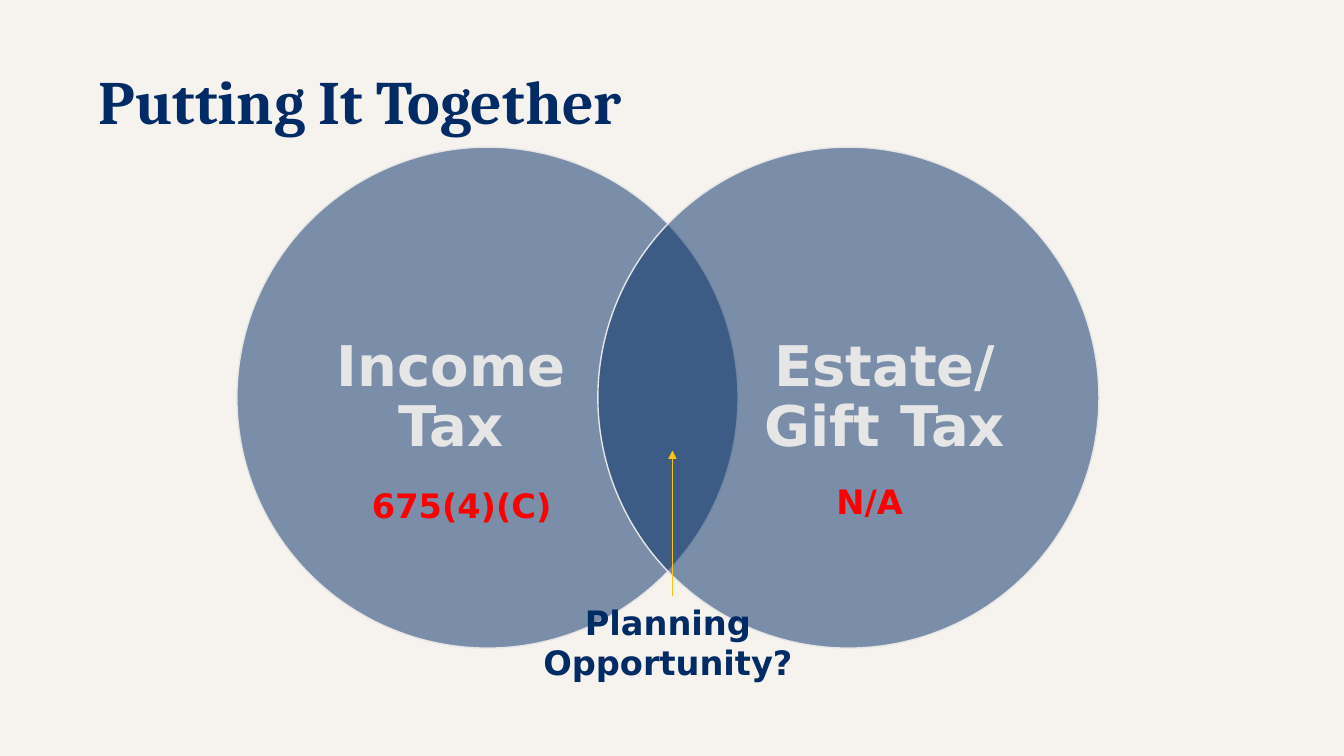
from lxml import etree
from pptx import Presentation
from pptx.dml.color import RGBColor
from pptx.enum.shapes import MSO_CONNECTOR, MSO_SHAPE
from pptx.enum.text import MSO_ANCHOR, PP_ALIGN
from pptx.oxml.ns import qn
from pptx.util import Inches, Pt

COLORS = {"bg": "F6F3EF", "navy": "002B64", "light": "E7E6E6",
          "red": "FF0000", "gold": "FFC20E"}
TITLE = "Putting It Together"
# circle left, label left, label
CIRCLES = [(2.35, 3.04, "Income Tax"), (5.93, 7.34, "Estate/\vGift Tax")]
CIRCLE_TOP, DIAMETER = 1.46, 4.97
LABEL_TOP, LABEL_W, LABEL_H = 2.05, 2.87, 3.8
# left, top, width, height, text, color, alignment
NOTES = [
    (3.59, 4.76, 2.49, 0.5, "675(4)(C)", "red", PP_ALIGN.LEFT),
    (7.75, 4.72, 1.75, 0.51, "N/A", "red", PP_ALIGN.CENTER),
    (4.46, 5.92, 4.33, 0.91, "Planning Opportunity?", "navy", PP_ALIGN.CENTER),
]
ARROW_X, ARROW_START, ARROW_END = 6.67, 5.91, 4.47


def rgb(name):
    return RGBColor.from_string(COLORS[name])


def write(tf, text, size, color, align, font="DejaVu Sans", spacing=None):
    tf.word_wrap = True
    tf.text = text
    p = tf.paragraphs[0]
    p.alignment = align
    p.line_spacing = spacing
    for r in p.runs:
        r.font.name = font
        r.font.size = Pt(size)
        r.font.bold = True
        r.font.color.rgb = rgb(color)


def add_text(left, top, width, height):
    box = s.shapes.add_textbox(Inches(left), Inches(top), Inches(width), Inches(height))
    return box.text_frame


prs = Presentation()
prs.slide_width, prs.slide_height = Inches(13.33), Inches(7.5)
s = prs.slides.add_slide(prs.slide_layouts[5])
s.background.fill.solid()
s.background.fill.fore_color.rgb = rgb("bg")

# Title
title = s.shapes.title
title.left, title.top = Inches(0.88), Inches(0.31)
title.width, title.height = Inches(11.5), Inches(1.45)
title.text_frame.vertical_anchor = MSO_ANCHOR.MIDDLE
write(title.text_frame, TITLE, 44, "navy", PP_ALIGN.LEFT, "Cambria", 0.9)

# Overlapping circles with their labels
for left, label_left, label in CIRCLES:
    sp = s.shapes.add_shape(MSO_SHAPE.OVAL, Inches(left), Inches(CIRCLE_TOP),
                            Inches(DIAMETER), Inches(DIAMETER))
    sp.shadow.inherit = False
    sp.fill.solid()
    sp.fill.fore_color.rgb = rgb("navy")
    color = sp.fill._xPr.find(qn("a:solidFill"))[0]
    etree.SubElement(color, qn("a:alpha"), val="50000")
    sp.line.color.rgb = rgb("light")
    sp.line.width = Pt(1)

    tf = add_text(label_left, LABEL_TOP, LABEL_W, LABEL_H)
    tf.margin_left = tf.margin_right = tf.margin_top = tf.margin_bottom = 0
    tf.vertical_anchor = MSO_ANCHOR.MIDDLE
    write(tf, label, 40, "light", PP_ALIGN.CENTER, spacing=0.9)

# Arrow into the overlap
arrow = s.shapes.add_connector(MSO_CONNECTOR.STRAIGHT, Inches(ARROW_X), Inches(ARROW_START),
                               Inches(ARROW_X), Inches(ARROW_END))
arrow.line.color.rgb = rgb("gold")
arrow.line.width = Pt(0.5)
etree.SubElement(arrow.line._get_or_add_ln(), qn("a:tailEnd"), type="triangle")
etree.SubElement(arrow._element.spPr, qn("a:effectLst"))

# Notes
for left, top, width, height, text, color, align in NOTES:
    write(add_text(left, top, width, height), text, 24, color, align)

prs.save("out.pptx")
